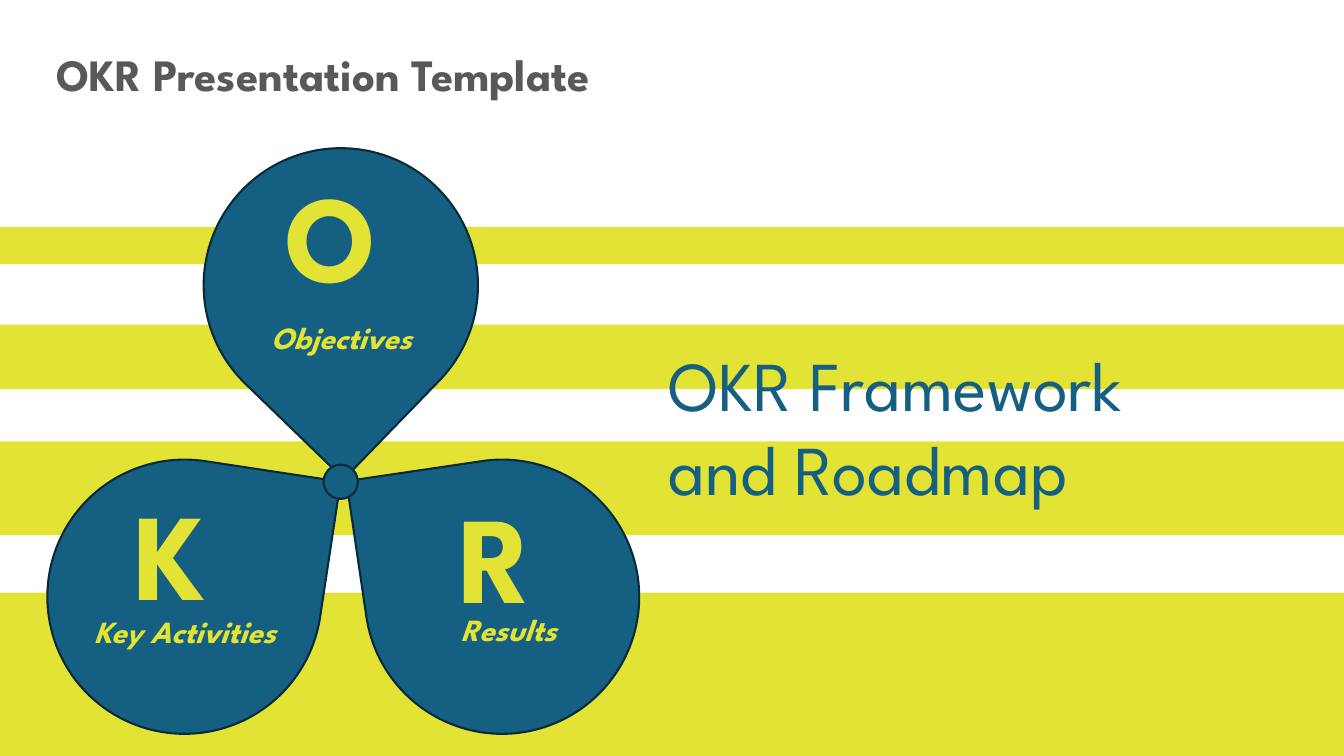
from pptx import Presentation
from pptx.dml.color import RGBColor
from pptx.enum.shapes import MSO_SHAPE
from pptx.enum.text import MSO_AUTO_SIZE, PP_ALIGN
from pptx.util import Inches, Pt

RECT, TEARDROP, OVAL = MSO_SHAPE.RECTANGLE, MSO_SHAPE.TEAR, MSO_SHAPE.OVAL
LEFT, CENTER = PP_ALIGN.LEFT, PP_ALIGN.CENTER
GROW = MSO_AUTO_SIZE.SHAPE_TO_FIT_TEXT

LIME = RGBColor(0xE3, 0xE3, 0x35)
BLUE = RGBColor(0x15, 0x60, 0x82)
NAVY = RGBColor(0x09, 0x2A, 0x39)
GRAY = RGBColor(0x59, 0x59, 0x59)
FONT = "League Spartan"

WIDTH, HEIGHT = 13.33, 7.5
PETAL = 2.72
HUB = (3.21, 4.61, 0.34, 0.34)
LETTER_HEIGHT = 1.58
LABEL_WIDTH, LABEL_HEIGHT = 2.75, 0.47

HEADING = ("OKR Presentation Template", (0.46, 0.41, 6.69, 0.64))
TITLE = ("OKR Framework and Roadmap", (6.53, 3.34, 5.64, 1.78))

# top, height
STRIPES = [(2.25, 0.37), (3.22, 0.64), (4.38, 0.93), (5.88, 1.62)]

# letter, label, petal corner, rotation, letter offset, letter width, label offset
PETALS = [
    ("K", "Key Activities", (0.47, 4.56), 8.6, (0.78, 0.13), 0.84, (-0.01, 1.47)),
    ("R", "Results", (3.62, 4.56), 261.6, (0.84, 0.16), 0.84, (0.05, 1.45)),
    ("O", "Objectives", (2.02, 1.47), 134.1, (0.71, 0.06), 0.94, (-0.01, 1.64)),
]


def add_shape(s, kind, box, fill, line=None, rotation=0):
    sp = s.shapes.add_shape(kind, *map(Inches, box))
    sp.shadow.inherit = False
    sp.rotation = rotation
    sp.fill.solid()
    sp.fill.fore_color.rgb = fill
    if line is None:
        sp.line.fill.background()
    else:
        sp.line.color.rgb = line
        sp.line.width = Pt(1.5)


def add_text(s, text, box, size, color, bold=True, italic=False, align=LEFT):
    tf = s.shapes.add_textbox(*map(Inches, box)).text_frame
    tf.word_wrap = True
    tf.auto_size = GROW
    p = tf.paragraphs[0]
    p.alignment = align
    r = p.add_run()
    r.text = text
    r.font.name = FONT
    r.font.size = Pt(size)
    r.font.bold = bold
    r.font.italic = italic
    r.font.color.rgb = color


def main():
    prs = Presentation()
    prs.slide_width, prs.slide_height = Inches(WIDTH), Inches(HEIGHT)
    s = prs.slides.add_slide(prs.slide_layouts[6])

    for top, height in STRIPES:
        add_shape(s, RECT, (0, top, WIDTH, height), LIME)
    add_text(s, *HEADING, 32, GRAY)

    for _, _, corner, rotation, *_ in PETALS:
        add_shape(s, TEARDROP, (*corner, PETAL, PETAL), BLUE, NAVY, rotation)
    for letter, label, (x, y), _, (dx, dy), width, (lx, ly) in PETALS:
        add_text(s, letter, (x + dx, y + dy, width, LETTER_HEIGHT), 88, LIME)
        add_text(s, label, (x + lx, y + ly, LABEL_WIDTH, LABEL_HEIGHT), 22, LIME,
                 italic=True, align=CENTER)
    add_shape(s, OVAL, HUB, BLUE, NAVY)

    add_text(s, *TITLE, 50, BLUE, bold=False)
    prs.save("out.pptx")


if __name__ == "__main__":
    main()
